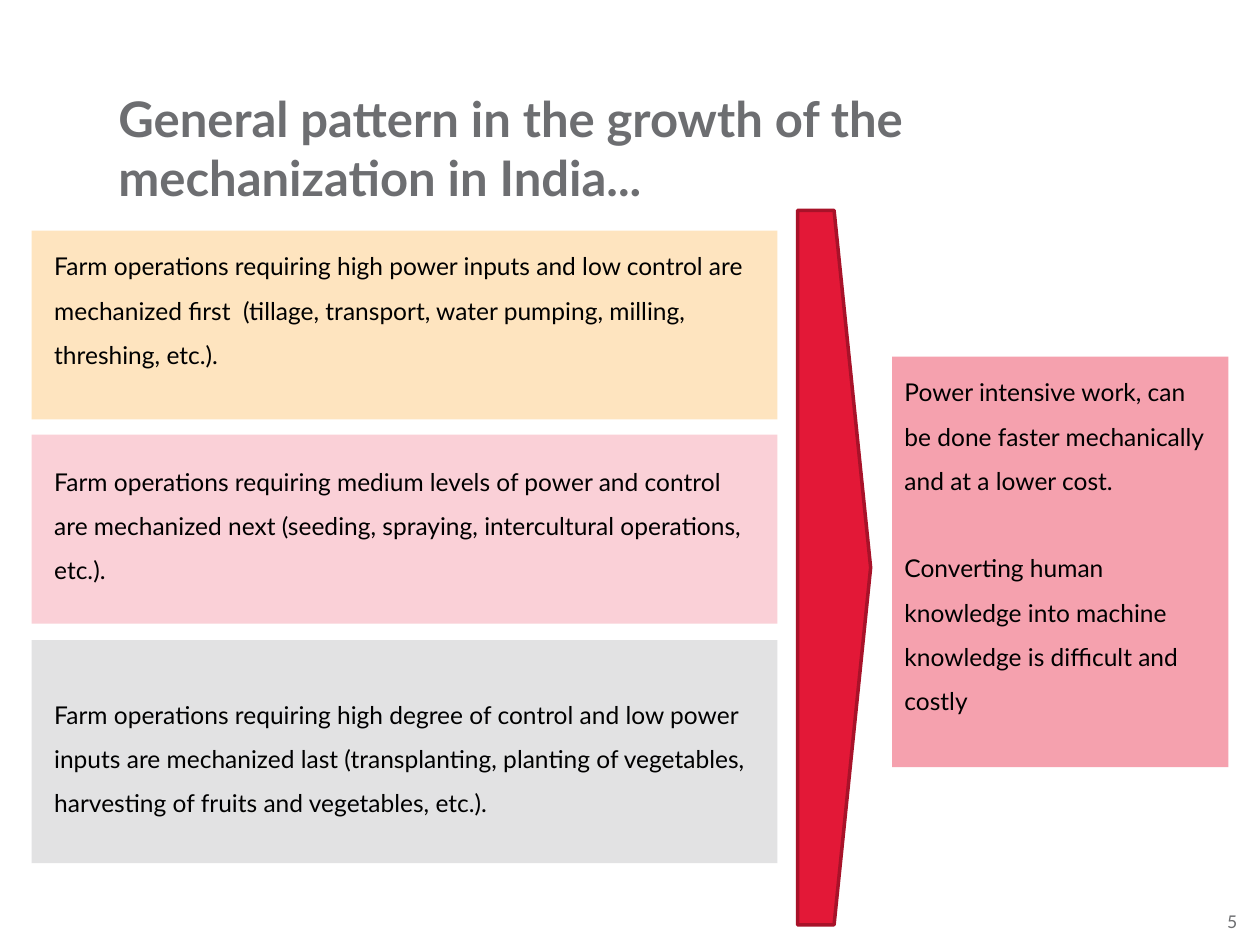
"""Build a slide on the growth pattern of farm mechanization in India."""
import pptx
import pptx.dml.color
import pptx.enum.shapes
import pptx.enum.text
import pptx.util

Inches, Pt = pptx.util.Inches, pptx.util.Pt
RGBColor = pptx.dml.color.RGBColor
MSO_SHAPE = pptx.enum.shapes.MSO_SHAPE
MSO_ANCHOR = pptx.enum.text.MSO_ANCHOR
MSO_AUTO_SIZE = pptx.enum.text.MSO_AUTO_SIZE
PP_ALIGN = pptx.enum.text.PP_ALIGN

FONT = "Lato"
BLACK = RGBColor(0x00, 0x00, 0x00)
GREY = RGBColor(0x6D, 0x6E, 0x71)
RED = RGBColor(0xE3, 0x18, 0x37)
DARK_RED = RGBColor(0xA8, 0x12, 0x29)
PINK = RGBColor(0xF5, 0xA1, 0xAE)
PALE_PINK = RGBColor(0xFA, 0xD0, 0xD7)
PALE_GREY = RGBColor(0xE2, 0xE2, 0xE3)
PALE_ORANGE = RGBColor(0xFE, 0xE4, 0xBF)


def style(p, size, color, align=PP_ALIGN.LEFT, bold=False):
    p.alignment = align
    p.font.name = FONT
    p.font.size = Pt(size)
    p.font.color.rgb = color
    p.font.bold = bold


def add_panel(left, top, width, height, fill, side, inset, texts):
    sp = s.shapes.add_shape(MSO_SHAPE.RECTANGLE, Inches(left), Inches(top),
                            Inches(width), Inches(height))
    sp.shadow.inherit = False
    sp.fill.solid()
    sp.fill.fore_color.rgb = fill
    sp.line.fill.background()
    tf = sp.text_frame
    tf.word_wrap = True
    tf.vertical_anchor = MSO_ANCHOR.TOP
    tf.margin_left = tf.margin_right = Inches(side)
    tf.margin_top = Inches(inset)
    for i, text in enumerate(texts):
        p = tf.add_paragraph() if i else tf.paragraphs[0]
        p.text = text
        p.line_spacing = 1.5
        p.space_before = Pt(25 if i else 0)
        style(p, 14, BLACK)


prs = pptx.Presentation()
prs.slide_width = Inches(10)
prs.slide_height = Inches(7.5)
s = prs.slides.add_slide(prs.slide_layouts[5])

title = s.shapes.title
title.left, title.top = Inches(0.84), Inches(0.65)
title.width, title.height = Inches(8.99), Inches(1)
tf = title.text_frame
tf.text = "General pattern in the growth of the mechanization in India..."
tf.word_wrap = True
tf.auto_size = MSO_AUTO_SIZE.NONE
tf.vertical_anchor = MSO_ANCHOR.TOP
style(tf.paragraphs[0], 28, GREY, bold=True)

stages = [
    (1.83, 1.5, PALE_ORANGE, 0.05,
     "Farm operations requiring high power inputs and low control are mechanized "
     "first  (tillage, transport, water pumping, milling, threshing, etc.)."),
    (3.45, 1.5, PALE_PINK, 0.14,
     "Farm operations requiring medium levels of power and control are mechanized "
     "next (seeding, spraying, intercultural operations, etc.)."),
    (5.08, 1.77, PALE_GREY, 0.36,
     "Farm operations requiring high degree of control and low power inputs are "
     "mechanized last (transplanting, planting of vegetables, harvesting of fruits "
     "and vegetables, etc.)."),
]
for top, height, fill, inset, text in stages:
    add_panel(0.25, top, 5.92, height, fill, 0.18, inset, [text])

add_panel(7.08, 2.83, 2.67, 3.26, PINK, 0.1, 0.05, [
    "Power intensive work, can be done faster mechanically and at a lower cost.",
    "Converting human knowledge into machine knowledge is difficult and costly",
])

arrow = s.shapes.add_shape(MSO_SHAPE.PENTAGON, Inches(6.33), Inches(1.67),
                           Inches(0.58), Inches(5.67))
arrow.shadow.inherit = False
arrow.fill.solid()
arrow.fill.fore_color.rgb = RED
arrow.line.color.rgb = DARK_RED
arrow.line.width = Pt(2)

number = s.shapes.add_textbox(Inches(9.64), Inches(7.23), Inches(0.18), Inches(0.17))
tf = number.text_frame
tf.text = "5"
tf.word_wrap = False
tf.vertical_anchor = MSO_ANCHOR.MIDDLE
tf.margin_left = tf.margin_right = tf.margin_top = tf.margin_bottom = 0
style(tf.paragraphs[0], 10, GREY, PP_ALIGN.RIGHT)

prs.save("out.pptx")
